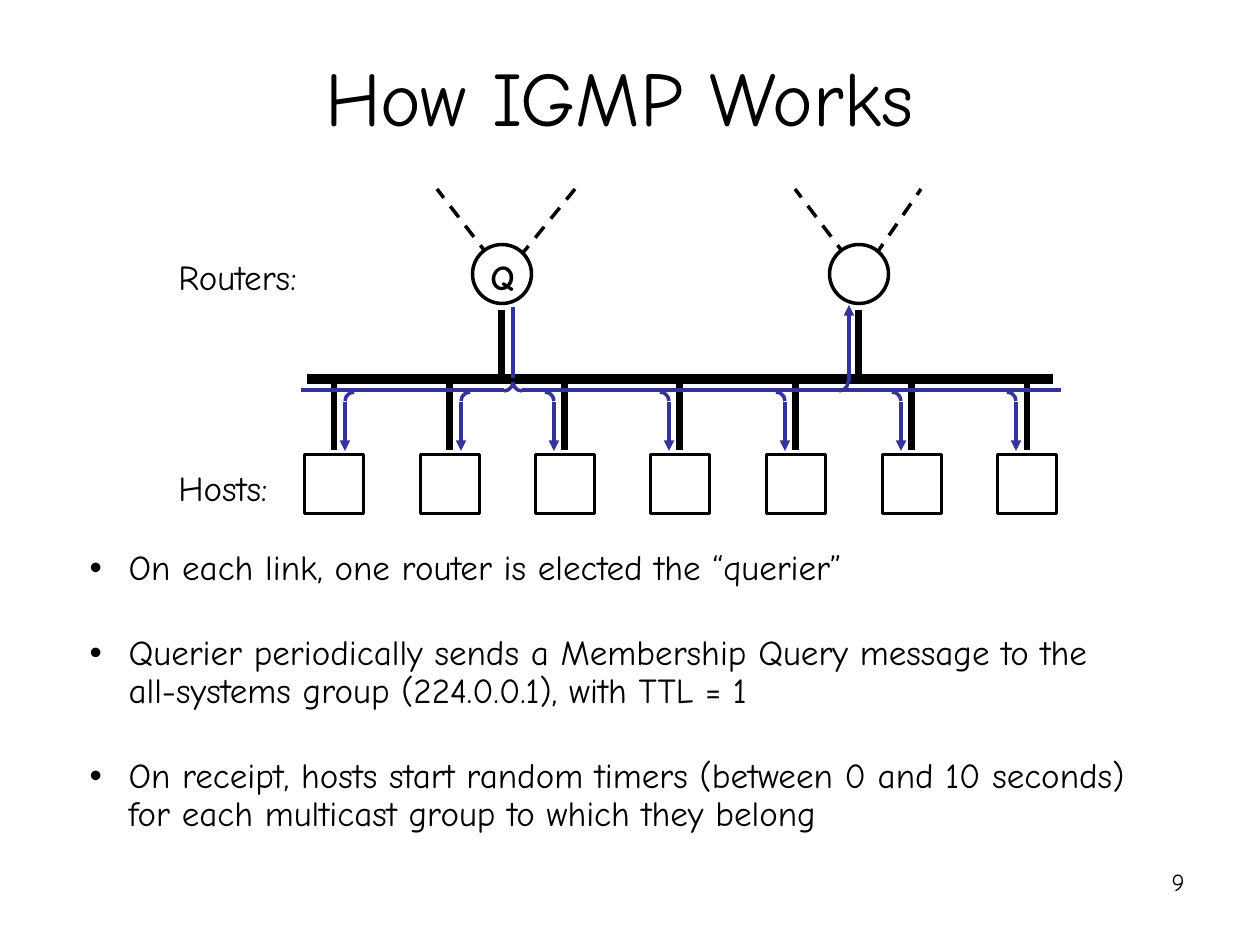
"""Build the slide that explains how IGMP works with a network diagram."""
from pptx import Presentation
from pptx.dml.color import RGBColor
from pptx.enum.dml import MSO_LINE
from pptx.enum.shapes import MSO_CONNECTOR, MSO_SHAPE
from pptx.enum.text import MSO_ANCHOR, MSO_AUTO_SIZE, PP_ALIGN
from pptx.oxml.ns import qn
from pptx.util import Pt
from lxml import etree

PX = 914400 / 126
STRAIGHT = MSO_CONNECTOR.STRAIGHT
ARC, OVAL, RECTANGLE = MSO_SHAPE.ARC, MSO_SHAPE.OVAL, MSO_SHAPE.RECTANGLE
DASH = MSO_LINE.DASH
LEFT, CENTER, RIGHT = PP_ALIGN.LEFT, PP_ALIGN.CENTER, PP_ALIGN.RIGHT
FONT = "Comic Neue"
BLACK, WHITE, BLUE = "000000", "FFFFFF", "333399"
ROUTER_Y, NODE_SIZE = 274, 59
BUS_Y, FLOW_Y, RADIUS = 379, 390, 9
HOST_Y, ARROW_GAP = 484, 11


def emu(*lengths):
    return [round(length * PX) for length in lengths]


def color(hex_string):
    return RGBColor.from_string(hex_string)


presentation = Presentation()
presentation.slide_width, presentation.slide_height = emu(1260, 945)
slide = presentation.slides.add_slide(presentation.slide_layouts[1])
shapes = slide.shapes

title, body = slide.placeholders
title.left, title.top, title.width, title.height = emu(97, 38, 1045, 116)
title.text_frame.text = "How IGMP Works"
title.text_frame.vertical_anchor = MSO_ANCHOR.MIDDLE
title.text_frame.paragraphs[0].alignment = CENTER

body.left, body.top, body.width, body.height = emu(77, 544, 1080, 349)
body.text_frame.text = "\n".join([
    "On each link, one router is elected the “querier”",
    "Querier periodically sends a Membership Query message to the all-systems group (224.0.0.1), with TTL = 1",
    "On receipt, hosts start random timers (between 0 and 10 seconds) for each multicast group to which they belong",
])
indent, = emu(39)
for index, paragraph in enumerate(body.text_frame.paragraphs):
    paragraph.line_spacing = 0.9
    paragraph.space_before = Pt(27 if index else 4)
    properties = paragraph._p.get_or_add_pPr()
    properties.set("marL", str(indent))
    properties.set("indent", str(-indent))

for placeholder, size in ((title, 44), (body, 20)):
    placeholder.text_frame.auto_size = MSO_AUTO_SIZE.NONE
    for paragraph in placeholder.text_frame.paragraphs:
        font = paragraph.runs[0].font
        font.name, font.size = FONT, Pt(size)
        font.color.rgb = color(BLACK)

routers = [(502, 437, 575), (859, 795, 921)]
hosts = [round(334 + 115.5 * index) for index in range(7)]
query_x, reply_x = 513, 849
lines = [(307, BUS_Y, 1053, BUS_Y, BLACK, 6, None, False)]
for x, left_end, right_end in routers:
    for end in (left_end, right_end):
        lines.append((x + 2, 276, end, 189, BLACK, 2, DASH, False))
    lines.append((x, 310, x, 377, BLACK, 4, None, False))
for x in hosts:
    lines.append((x, 383, x, 450, BLACK, 4, None, False))

lines += [
    (query_x, 307, query_x, 378, BLUE, 2, None, False),
    (query_x - RADIUS, FLOW_Y, 301, FLOW_Y, BLUE, 2, None, False),
    (1061, FLOW_Y, query_x + RADIUS, FLOW_Y, BLUE, 2, None, False),
    (reply_x, 382, reply_x, 305, BLUE, 2, None, True),
]
arcs = [
    (query_x - RADIUS, 382, 90),
    (query_x + RADIUS, 382, 180),
    (reply_x - RADIUS - 1, 382, 90),
]
for x in hosts:
    side = 1 if x < query_x else -1
    arrow_x = x + side * ARROW_GAP
    lines.append((arrow_x, 402, arrow_x, 451, BLUE, 2, None, True))
    arcs.append((arrow_x + side * RADIUS, 401, 270 if side == 1 else 0))

for x1, y1, x2, y2, line_color, width, dash, arrow in lines:
    connector = shapes.add_connector(STRAIGHT, *emu(x1, y1, x2, y2))
    connector.line.color.rgb = color(line_color)
    connector.line.width = Pt(width)
    if dash:
        connector.line.dash_style = dash
    if arrow:
        etree.SubElement(connector.line._get_or_add_ln(), qn("a:tailEnd"), type="triangle")
    etree.SubElement(connector._element.spPr, qn("a:effectLst"))

for x, y, rotation in arcs:
    arc = shapes.add_shape(ARC, *emu(x - RADIUS, y - RADIUS, 2 * RADIUS, 2 * RADIUS))
    arc.rotation = rotation
    arc.shadow.inherit = False
    arc.fill.background()
    arc.line.color.rgb = color(BLUE)
    arc.line.width = Pt(2)

nodes = [(OVAL, router[0], ROUTER_Y) for router in routers]
nodes += [(RECTANGLE, x, HOST_Y) for x in hosts]
for kind, x, y in nodes:
    node = shapes.add_shape(kind, *emu(x - NODE_SIZE / 2, y - NODE_SIZE / 2, NODE_SIZE, NODE_SIZE))
    node.shadow.inherit = False
    node.fill.solid()
    node.fill.fore_color.rgb = color(WHITE)
    node.line.color.rgb = color(BLACK)
    node.line.width = Pt(2)

labels = [
    ("Q", 475, 249, 55, 54, 20, CENTER, True),
    ("Routers:", 166, 249, 164, 54, 20, LEFT, False),
    ("Hosts:", 166, 460, 131, 54, 20, LEFT, False),
    ("9", 903, 861, 294, 66, 14, RIGHT, False),
]
for text, x, y, width, height, size, alignment, bold in labels:
    label = shapes.add_textbox(*emu(x, y, width, height))
    label.text_frame.word_wrap = True
    label.text_frame.text = text
    paragraph = label.text_frame.paragraphs[0]
    paragraph.alignment = alignment
    font = paragraph.runs[0].font
    font.name, font.size, font.bold = FONT, Pt(size), bold
    font.color.rgb = color(BLACK)

presentation.save("out.pptx")
